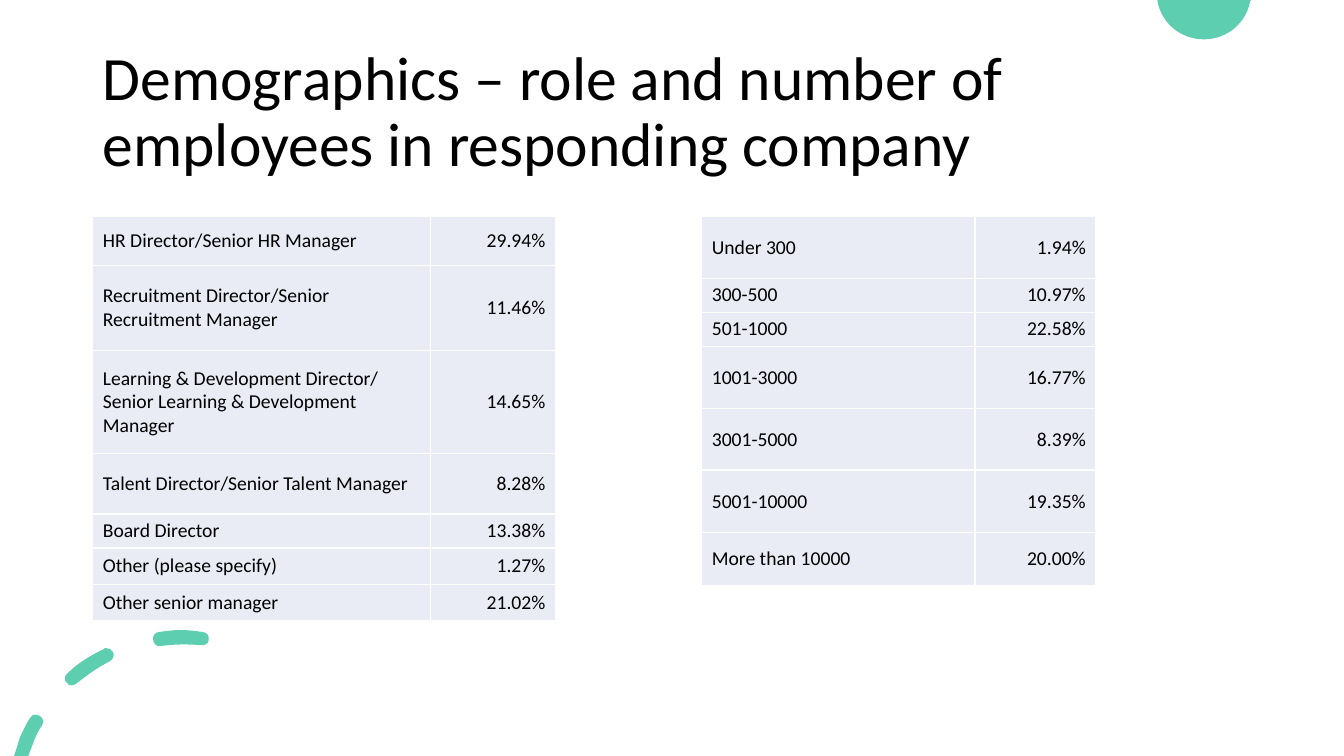
from lxml import etree
from pptx import Presentation
from pptx.dml.color import RGBColor
from pptx.enum import text
from pptx.oxml import ns
from pptx.util import Inches, Pt

GREEN = RGBColor(0x5D, 0xCE, 0xAF)
LAVENDER = RGBColor(0xE9, 0xEB, 0xF5)
WHITE = RGBColor(0xFF, 0xFF, 0xFF)
BLACK = RGBColor(0, 0, 0)
FONT = "Calibri"

TITLE = "Demographics – role and number of employees in responding company"
TABLES = [
    {
        "left": 0.92,
        "widths": (3.35, 1.24),
        "rows": [
            (0.48, "HR Director/Senior HR Manager", "29.94%"),
            (0.85, "Recruitment Director/Senior Recruitment Manager", "11.46%"),
            (1.02, "Learning & Development Director/ Senior Learning & Development Manager", "14.65%"),
            (0.6, "Talent Director/Senior Talent Manager", "8.28%"),
            (0.24, "Board Director", "13.38%"),
            (0.36, "Other (please specify)", "1.27%"),
            (0.36, "Other senior manager", "21.02%"),
        ],
    },
    {
        "left": 6.96,
        "widths": (2.71, 1.2),
        "rows": [
            (0.61, "Under 300", "1.94%"),
            (0.31, "300-500", "10.97%"),
            (0.31, "501-1000", "22.58%"),
            (0.62, "1001-3000", "16.77%"),
            (0.61, "3001-5000", "8.39%"),
            (0.62, "5001-10000", "19.35%"),
            (0.53, "More than 10000", "20.00%"),
        ],
    },
]
TABLE_TOP = 2.15

HALF_DISC = [
    [(11.48, 0), (12.41, 0), (12.4, 0.01),
     (12.36, 0.23, 12.17, 0.39, 11.94, 0.39),
     (11.71, 0.39, 11.52, 0.23, 11.48, 0.01)],
]
DASHED_ARC = [
    [(0.36, 7.09), (0.34, 7.08, 0.31, 7.1, 0.3, 7.12),
     (0.26, 7.18, 0.23, 7.25, 0.2, 7.31), (0.14, 7.5), (0.28, 7.5), (0.33, 7.37),
     (0.35, 7.31, 0.38, 7.25, 0.42, 7.19), (0.44, 7.16, 0.42, 7.11, 0.39, 7.1),
     (0.38, 7.09, 0.37, 7.09, 0.36, 7.09)],
    [(1.05, 6.43), (1.04, 6.43, 1.03, 6.43, 1.03, 6.44),
     (0.9, 6.5, 0.77, 6.58, 0.67, 6.68), (0.64, 6.7, 0.63, 6.75, 0.66, 6.77),
     (0.67, 6.79, 0.69, 6.8, 0.71, 6.8), (0.73, 6.8, 0.74, 6.79, 0.76, 6.78),
     (0.86, 6.7, 0.97, 6.62, 1.09, 6.56), (1.12, 6.54, 1.14, 6.5, 1.12, 6.47),
     (1.11, 6.44, 1.08, 6.43, 1.05, 6.43)],
    [(1.79, 6.25), (1.72, 6.25, 1.65, 6.26, 1.58, 6.27),
     (1.54, 6.27, 1.51, 6.31, 1.52, 6.35), (1.52, 6.38, 1.55, 6.41, 1.58, 6.41),
     (1.59, 6.41), (1.73, 6.39, 1.86, 6.39, 1.99, 6.4),
     (2.03, 6.41, 2.07, 6.38, 2.07, 6.35), (2.08, 6.31, 2.05, 6.27, 2.01, 6.27),
     (1.94, 6.26, 1.86, 6.25, 1.79, 6.25)],
]


def bend_segments(sp, segments):
    lines = list(sp._element.iter(ns.qn("a:lnTo")))
    for line, segment in zip(lines, segments):
        if len(segment) == 2:
            continue
        line.tag = ns.qn("a:cubicBezTo")
        controls = zip(segment[0:4:2], segment[1:4:2])
        for index, (x, y) in enumerate(controls):
            point = etree.Element(ns.qn("a:pt"), x=str(Inches(x) - sp.left),
                                  y=str(Inches(y) - sp.top))
            line.insert(index, point)


def add_outline(s, contours):
    builder = None
    for contour in contours:
        start, *ends = [tuple(Inches(v) for v in segment[-2:]) for segment in contour]
        if builder is None:
            builder = s.shapes.build_freeform(*start)
        else:
            builder.move_to(*start)
        builder.add_line_segments(ends, close=True)
        if ends[-1] != start:
            continue
    sp = builder.convert_to_shape()
    sp.shadow.inherit = False
    sp.fill.solid()
    sp.fill.fore_color.rgb = GREEN
    sp.line.fill.background()
    return sp


def drawn_segments(contours):
    segments = []
    for contour in contours:
        segments += contour[1:]
        if contour[-1][-2:] != contour[0]:
            segments.append(contour[0])
    return segments


def add_text(p, content, size):
    r = p.add_run()
    r.text = content
    r.font.size = Pt(size)
    r.font.name = FONT
    r.font.color.rgb = BLACK


def set_borders(cell):
    props = cell._tc.get_or_add_tcPr()
    for index, side in enumerate(("a:lnL", "a:lnR", "a:lnT", "a:lnB")):
        line = etree.Element(ns.qn(side), w=str(Pt(1)))
        fill = etree.SubElement(line, ns.qn("a:solidFill"))
        etree.SubElement(fill, ns.qn("a:srgbClr"), val=str(WHITE))
        props.insert(index, line)


def add_data_table(s, left, widths, rows):
    height = sum(row[0] for row in rows)
    table = s.shapes.add_table(len(rows), len(widths), Inches(left), Inches(TABLE_TOP),
                               Inches(sum(widths)), Inches(height)).table
    table.first_row = table.horz_banding = False
    for column, width in zip(table.columns, widths):
        column.width = Inches(width)
    for i, (row_height, *values) in enumerate(rows):
        table.rows[i].height = Inches(row_height)
        for j, value in enumerate(values):
            cell = table.cell(i, j)
            cell.fill.solid()
            cell.fill.fore_color.rgb = LAVENDER
            cell.vertical_anchor = text.MSO_ANCHOR.MIDDLE
            p = cell.text_frame.paragraphs[0]
            p.alignment = text.PP_ALIGN.RIGHT if j else text.PP_ALIGN.LEFT
            add_text(p, value, 14)
            set_borders(cell)


def main():
    prs = Presentation()
    prs.slide_width, prs.slide_height = Inches(13.33), Inches(7.5)
    s = prs.slides.add_slide(prs.slide_layouts[5])

    title = s.shapes.title
    title.left, title.top = Inches(0.92), Inches(0.4)
    title.width, title.height = Inches(11.5), Inches(1.45)
    tf = title.text_frame
    tf.word_wrap = True
    tf.auto_size = text.MSO_AUTO_SIZE.NONE
    tf.vertical_anchor = text.MSO_ANCHOR.MIDDLE
    p = tf.paragraphs[0]
    p.alignment = text.PP_ALIGN.LEFT
    p.line_spacing = 0.9
    add_text(p, TITLE, 44)

    for contours in (HALF_DISC, DASHED_ARC):
        sp = add_outline(s, contours)
        bend_segments(sp, drawn_segments(contours))
    for data in TABLES:
        add_data_table(s, **data)
    prs.save("out.pptx")


if __name__ == "__main__":
    main()
